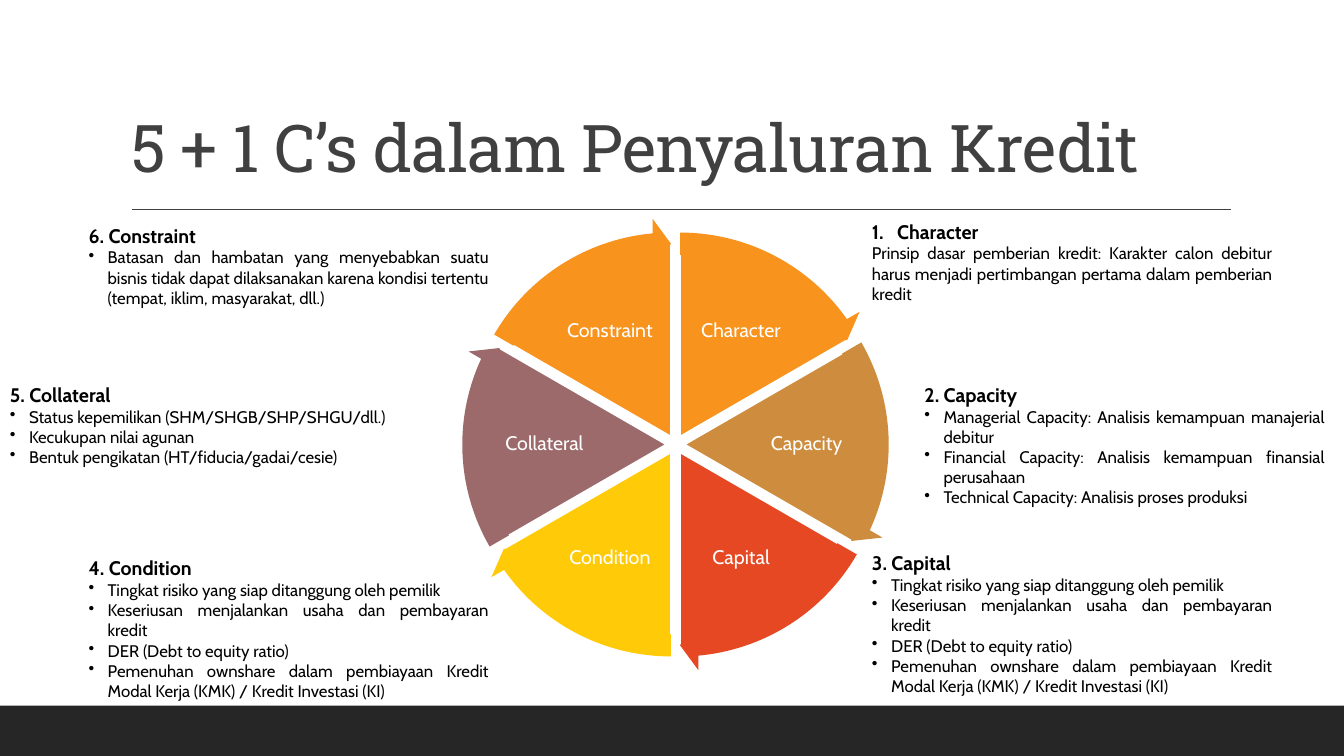
from math import cos, radians, sin

from lxml import etree
from pptx import Presentation
from pptx import util as u
from pptx.dml.color import RGBColor
from pptx.enum import shapes, text
from pptx.oxml.ns import qn

TITLE = "5 + 1 C’s dalam Penyaluran Kredit"
CAPITAL_POINTS = [
    "Tingkat risiko yang siap ditanggung oleh pemilik",
    "Keseriusan menjalankan usaha dan pembayaran kredit",
    "DER (Debt to equity ratio)",
    "Pemenuhan ownshare dalam pembiayaan Kredit Modal Kerja (KMK) / Kredit Investasi (KI)",
]
SECTORS = [
    ("Character", "F8931D"),
    ("Capacity", "CE8D3E"),
    ("Capital", "E64823"),
    ("Condition", "FFCA08"),
    ("Collateral", "9C6A6A"),
    ("Constraint", "F8931D"),
]
NOTES = [
    ("Character", 8.55, 2.13, 0.94, [
        "Prinsip dasar pemberian kredit: Karakter calon debitur harus menjadi "
        "pertimbangan pertama dalam pemberian kredit"]),
    ("2. Capacity", 9.07, 3.75, 1.35, [
        "Managerial Capacity: Analisis kemampuan manajerial debitur",
        "Financial Capacity: Analisis kemampuan finansial perusahaan",
        "Technical Capacity: Analisis proses produksi"]),
    ("3. Capital", 8.55, 5.42, 1.55, CAPITAL_POINTS),
    ("5. Collateral", 0, 3.75, 0.94, [
        "Status kepemilikan (SHM/SHGB/SHP/SHGU/dll.)",
        "Kecukupan nilai agunan",
        "Bentuk pengikatan (HT/fiducia/gadai/cesie)"]),
    ("4. Condition", 0.78, 5.47, 1.55, CAPITAL_POINTS),
    ("6. Constraint", 0.78, 2.17, 0.94, [
        "Batasan dan hambatan yang menyebabkan suatu bisnis tidak dapat dilaksanakan "
        "karena kondisi tertentu (tempat, iklim, masyarakat, dll.)"]),
]
WIDTH, HEIGHT = 13.33, 7.5
NOTE_WIDTH = 4.17
HUB = (6.7, 4.41)
SECTOR_GAP, LABEL_REACH = 0.09, 1.3
PIE_RADIUS, ARROW_RADIUS = 1.93, 2.17
LABEL_SIZE = (1.04, 0.78)
SWEEP = 360 / len(SECTORS)
ANGLE_UNIT = 0.6
HEAD_ANGLE = 3.275

deck = Presentation()
deck.slide_width, deck.slide_height = u.Inches(WIDTH), u.Inches(HEIGHT)
slide = deck.slides.add_slide(deck.slide_layouts[5])


def color(hex_value):
    return RGBColor.from_string(hex_value)


def inches(*lengths):
    return [u.Inches(length) for length in lengths]


def around(center, width, height):
    return inches(center[0] - width / 2, center[1] - height / 2, width, height)


def outward(angle, reach):
    return HUB[0] + reach * cos(radians(angle)), HUB[1] + reach * sin(radians(angle))


def apply(target, formats):
    for key, value in formats.items():
        setattr(target, key, value)


def write(paragraph, words, size, hex_value, font="Cabin", bold=False, **formats):
    run = paragraph.add_run()
    run.text = words
    apply(run.font, {"name": font, "size": u.Pt(size), "bold": bold})
    run.font.color.rgb = color(hex_value)
    apply(paragraph, formats)
    return run


def indent(paragraph, depth, tag, **marker):
    properties = paragraph._p.get_or_add_pPr()
    properties.set("marL", str(u.Inches(depth)))
    properties.set("indent", str(-u.Inches(depth)))
    etree.SubElement(properties, qn(tag), marker)


def add_solid(kind, box, fill, adjustments=(), outline=None):
    solid = slide.shapes.add_shape(kind, *box)
    solid.shadow.inherit = False
    solid.fill.solid()
    solid.fill.fore_color.rgb = color(fill)
    for index, value in enumerate(adjustments):
        solid.adjustments[index] = value
    if outline:
        solid.line.color.rgb = color(outline)
        solid.line.width = u.Pt(1.25)
    else:
        solid.line.fill.background()


def add_frame():
    add_solid(shapes.MSO_SHAPE.RECTANGLE, inches(0, HEIGHT - 0.5, WIDTH, 0.5), "262626")
    rule = slide.shapes.add_connector(
        shapes.MSO_CONNECTOR.STRAIGHT, *inches(1.31, 2.08, 12.21, 2.08))
    rule.line.color.rgb = color("404040")
    rule.line.width = u.Pt(1)
    etree.SubElement(rule._element.spPr, qn("a:effectLst"))
    heading = slide.shapes.title
    apply(heading, dict(zip(("left", "top", "width", "height"), inches(1.2, 0.31, 11, 1.59))))
    apply(heading.text_frame, {
        "vertical_anchor": text.MSO_ANCHOR.BOTTOM,
        "auto_size": text.MSO_AUTO_SIZE.NONE, "word_wrap": True})
    run = write(heading.text_frame.paragraphs[0], TITLE, 47, "404040", "Roboto Slab",
                alignment=text.PP_ALIGN.LEFT, line_spacing=0.9)
    run._r.get_or_add_rPr().set("spc", "-50")


def add_wheel():
    arrows = []
    for index, (label, fill) in enumerate(SECTORS):
        start = (270 + index * SWEEP) % 360
        middle = start + SWEEP / 2
        end = (start + SWEEP) % 360
        center = outward(middle, SECTOR_GAP)
        first, last = start * ANGLE_UNIT, end * ANGLE_UNIT
        add_solid(shapes.MSO_SHAPE.PIE, around(center, 2 * PIE_RADIUS, 2 * PIE_RADIUS),
                  fill, (first, last), "FFFFFF")
        arrows.append((around(center, 2 * ARROW_RADIUS, 2 * ARROW_RADIUS), fill,
                       (0.051, HEAD_ANGLE, last - HEAD_ANGLE, first, 0.059)))
        caption = slide.shapes.add_textbox(*around(outward(middle, LABEL_REACH), *LABEL_SIZE))
        sides = ("left", "top", "right", "bottom")
        apply(caption.text_frame, {f"margin_{side}": u.Inches(0.02) for side in sides})
        apply(caption.text_frame, {
            "word_wrap": True, "vertical_anchor": text.MSO_ANCHOR.MIDDLE})
        write(caption.text_frame.paragraphs[0], label, 14, "FFFFFF",
              alignment=text.PP_ALIGN.CENTER, line_spacing=0.9)
    for arrow in arrows:
        add_solid(shapes.MSO_SHAPE.CIRCULAR_ARROW, *arrow)


def add_notes():
    for heading, left, top, height, points in NOTES:
        frame = slide.shapes.add_textbox(*inches(left, top, NOTE_WIDTH, height)).text_frame
        frame.word_wrap = True
        frame.auto_size = text.MSO_AUTO_SIZE.SHAPE_TO_FIT_TEXT
        head = frame.paragraphs[0]
        write(head, heading, 14, "000000", bold=True, alignment=text.PP_ALIGN.JUSTIFY)
        numbered = heading == "Character"
        if numbered:
            indent(head, 0.25, "a:buAutoNum", type="arabicPeriod")
        for point in points:
            item = frame.add_paragraph()
            write(item, point, 12, "000000", alignment=text.PP_ALIGN.JUSTIFY)
            if not numbered:
                indent(item, 0.19, "a:buChar", char="•")


add_frame()
add_wheel()
add_notes()
deck.save("out.pptx")
